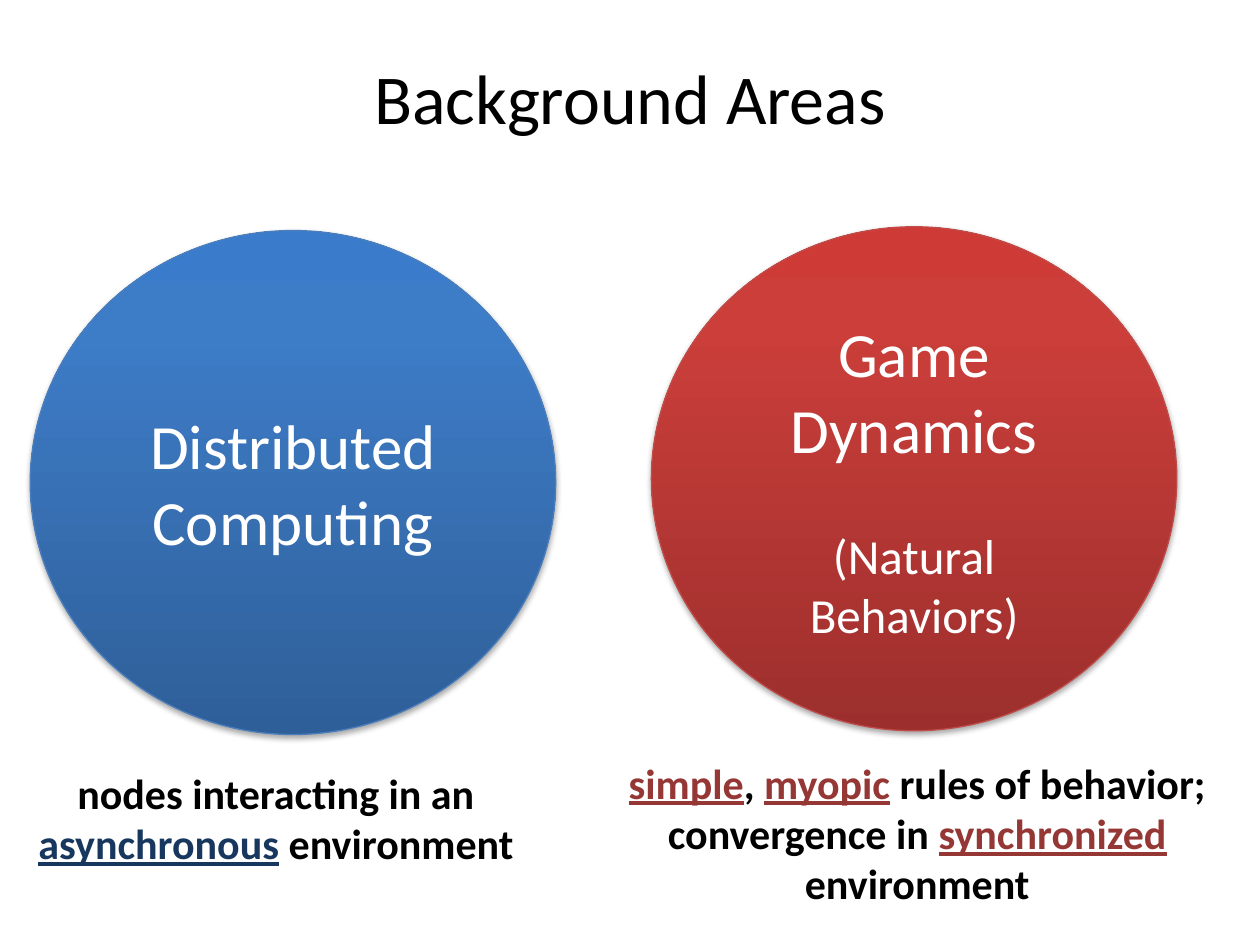
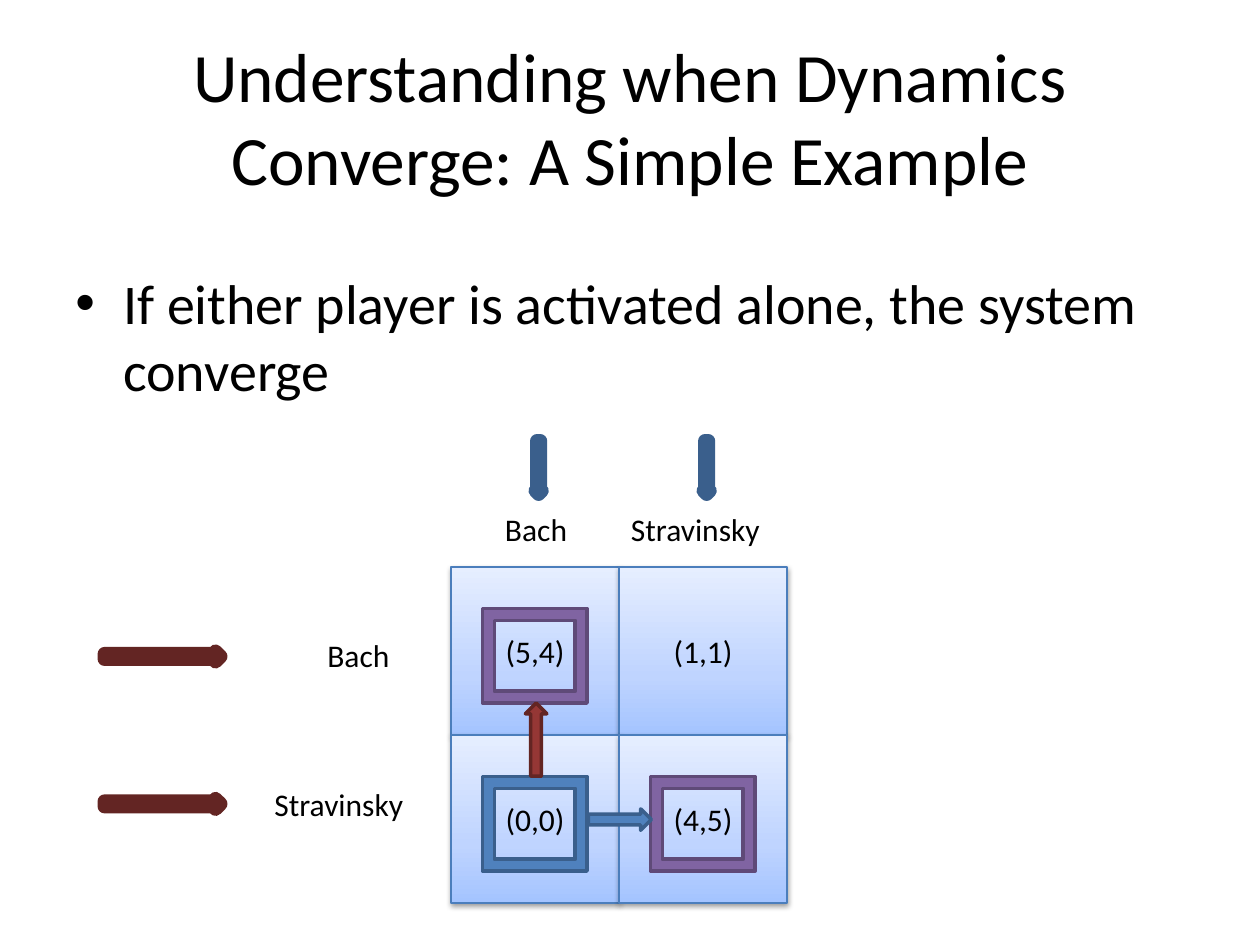
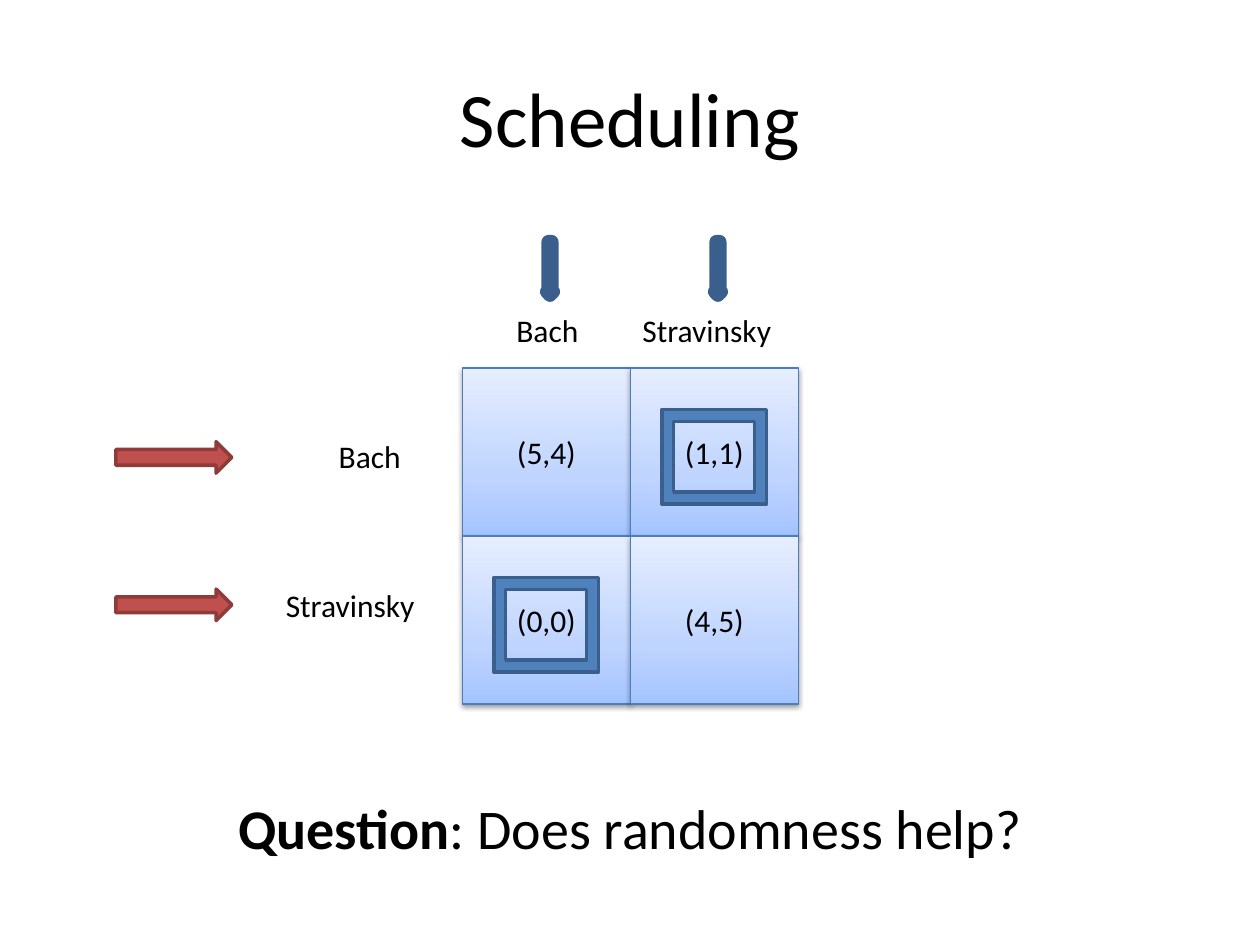
from copy import deepcopy
from dataclasses import dataclass

from lxml import etree
from pptx import Presentation
from pptx.dml.color import RGBColor
from pptx.enum.shapes import MSO_SHAPE
from pptx.enum.text import MSO_ANCHOR, MSO_AUTO_SIZE, PP_ALIGN
from pptx.oxml.ns import qn
from pptx.shapes.autoshape import Shape
from pptx.slide import Slide
from pptx.util import Inches, Pt

ELLIPSE, RECTANGLE, FRAME = MSO_SHAPE.OVAL, MSO_SHAPE.RECTANGLE, MSO_SHAPE.FRAME
RIGHT_ARROW, DOWN_ARROW, UP_ARROW = MSO_SHAPE.RIGHT_ARROW, MSO_SHAPE.DOWN_ARROW, MSO_SHAPE.UP_ARROW
LEFT, CENTER = PP_ALIGN.LEFT, PP_ALIGN.CENTER
TOP, MIDDLE = MSO_ANCHOR.TOP, MSO_ANCHOR.MIDDLE
FIT_SHAPE = MSO_AUTO_SIZE.SHAPE_TO_FIT_TEXT

FONT = "Calibri"
BLACK = RGBColor(0x00, 0x00, 0x00)
WHITE = RGBColor(0xFF, 0xFF, 0xFF)
NAVY = RGBColor(0x17, 0x37, 0x5E)
BLUE = RGBColor(0x4F, 0x81, 0xBD)
DARK_BLUE = RGBColor(0x3A, 0x5F, 0x8C)
EDGE_BLUE = RGBColor(0x4B, 0x7E, 0xBC)
RED = RGBColor(0xC0, 0x50, 0x4D)
EDGE_RED = RGBColor(0xBF, 0x4C, 0x48)
RED_OUTLINE = RGBColor(0x8E, 0x3B, 0x39)
DARK_RED = RGBColor(0x95, 0x37, 0x35)
MAROON = RGBColor(0x63, 0x25, 0x23)
PURPLE = RGBColor(0x80, 0x64, 0xA2)
DARK_PURPLE = RGBColor(0x5F, 0x4A, 0x78)

# Gradient stops run from bottom to top
BLUE_GRADIENT = ((0, RGBColor(0x2F, 0x5F, 0x99)), (0.8, RGBColor(0x3D, 0x7C, 0xC7)),
                 (1, RGBColor(0x3A, 0x7C, 0xCB)))
RED_GRADIENT = ((0, RGBColor(0x9C, 0x2F, 0x2D)), (0.8, RGBColor(0xCB, 0x3E, 0x3A)),
                (1, RGBColor(0xCE, 0x3B, 0x37)))
CELL_GRADIENT = ((0, RGBColor(0xA4, 0xC4, 0xFF)), (0.35, RGBColor(0xBF, 0xD4, 0xFF)),
                 (1, RGBColor(0xE6, 0xEE, 0xFF)))

# Payoff matrix
CELL = 4 / 3
STRATEGIES = ("Bach", "Stravinsky")
LABEL_WIDTHS = (0.7, 1.23)
ROW_LABEL_OFFSETS = ((-1.08, 0.5), (-1.5, 1.68))
COLUMN_LABEL_OFFSETS = ((0.33, -0.5), (1.33, -0.5))
ROW_ARROW_CENTERS = (0.71, 1.88)
PAYOFFS = (("(5,4)", "(1,1)"), ("(0,0)", "(4,5)"))


@dataclass(frozen=True)
class Box:
    left: float
    top: float
    width: float
    height: float

    def lengths(self) -> tuple:
        return Inches(self.left), Inches(self.top), Inches(self.width), Inches(self.height)


@dataclass(frozen=True)
class Run:
    text: str
    color: RGBColor | None = None
    underline: bool = False
    bold: bool = False


@dataclass(frozen=True)
class Paint:
    fill: RGBColor
    line: RGBColor
    line_width: float = 2


BLUE_PAINT = Paint(BLUE, DARK_BLUE)
THICK_BLUE = Paint(BLUE, DARK_BLUE, 8)
PURPLE_PAINT = Paint(PURPLE, DARK_PURPLE)
MAROON_PAINT = Paint(DARK_RED, MAROON)
THICK_MAROON = Paint(DARK_RED, MAROON, 8)
RED_PAINT = Paint(RED, RED_OUTLINE)


@dataclass(frozen=True)
class Matrix:
    left: float
    top: float
    row_arrow_paint: Paint
    row_arrow_height: float
    frames: tuple[tuple[int, int, Paint], ...]


def write_text(shape: Shape, *lines: str | tuple[Run, ...], size: float = 18,
               color: RGBColor = BLACK, bold: bool = False, alignment=CENTER,
               anchor=MIDDLE, wrap: bool = True, last_size: float | None = None,
               last_gap: float = 0) -> None:
    """Writes one paragraph per line; the last may have its own size and gap."""
    frame = shape.text_frame
    frame.word_wrap = wrap
    frame.vertical_anchor = anchor
    for index, line in enumerate(lines):
        paragraph = frame.paragraphs[0] if index == 0 else frame.add_paragraph()
        paragraph.alignment = alignment
        is_last = index == len(lines) - 1
        if is_last and last_gap:
            paragraph.space_before = Pt(last_gap)
        for part in (Run(line),) if isinstance(line, str) else line:
            run = paragraph.add_run()
            run.text = part.text
            run.font.name = FONT
            run.font.size = Pt(last_size if is_last and last_size else size)
            run.font.bold = bold or part.bold
            run.font.underline = part.underline
            run.font.color.rgb = part.color or color


def add_text(slide: Slide, box: Box, *lines: str | tuple[Run, ...], fit: bool = False,
             **text_format) -> Shape:
    shape = slide.shapes.add_textbox(*box.lengths())
    write_text(shape, *lines, **text_format)
    if fit:
        shape.text_frame.auto_size = FIT_SHAPE
    return shape


def add_title(slide: Slide, text: str, size: float, top: float = 0.3) -> None:
    add_text(slide, Box(0.5, top, 9, 1.25), text, size=size)


def add_bullet(shape: Shape) -> None:
    for paragraph in shape.text_frame.paragraphs:
        properties = paragraph._p.get_or_add_pPr()
        properties.set("marL", str(Inches(0.38)))
        properties.set("indent", str(Inches(-0.38)))
        etree.SubElement(properties, qn("a:buFont"), typeface="Arial")
        etree.SubElement(properties, qn("a:buChar"), char="•")


def add_solid(slide: Slide, kind, box: Box, paint: Paint) -> None:
    shape = slide.shapes.add_shape(kind, *box.lengths())
    shape.shadow.inherit = False
    shape.fill.solid()
    shape.fill.fore_color.rgb = paint.fill
    shape.line.color.rgb = paint.line
    shape.line.width = Pt(paint.line_width)


def add_glossy(slide: Slide, kind, box: Box, gradient: tuple, edge: RGBColor,
               shadow_percent: int, shadow_distance: float) -> Shape:
    shape = slide.shapes.add_shape(kind, *box.lengths())
    shape.line.color.rgb = edge
    shape.line.width = Pt(0.75)
    # Three-stop gradient
    shape.fill.gradient()
    shape.fill.gradient_angle = 90
    properties = shape._element.spPr
    stop_list = properties.find(".//" + qn("a:gsLst"))
    stop_list.append(deepcopy(stop_list[0]))
    for stop, (position, color) in zip(shape.fill.gradient_stops, gradient):
        stop.position = position
        stop.color.rgb = color
    # Soft shadow below
    shape.shadow.inherit = False
    shadow = etree.SubElement(properties.find(qn("a:effectLst")), qn("a:outerShdw"),
                              blurRad=str(Pt(3.1)), dist=str(Pt(shadow_distance)),
                              dir="5400000", rotWithShape="0")
    shadow_color = etree.SubElement(shadow, qn("a:srgbClr"), val=str(BLACK))
    etree.SubElement(shadow_color, qn("a:alpha"), val=str(shadow_percent * 1000))
    return shape


def add_matrix(slide: Slide, matrix: Matrix) -> None:
    left, top = matrix.left, matrix.top
    for row, payoffs in enumerate(PAYOFFS):
        for column, payoff in enumerate(payoffs):
            box = Box(left + column * CELL, top + row * CELL, CELL, CELL)
            cell = add_glossy(slide, RECTANGLE, box, CELL_GRADIENT, EDGE_BLUE, 38, 1.6)
            write_text(cell, payoff)
    # Strategy names beside the rows and above the columns
    for offsets in (ROW_LABEL_OFFSETS, COLUMN_LABEL_OFFSETS):
        for name, width, (across, down) in zip(STRATEGIES, LABEL_WIDTHS, offsets):
            add_text(slide, Box(left + across, top + down, width, 0.4), name,
                     alignment=LEFT, anchor=TOP, wrap=False, fit=True)
    # Arrows of the two players
    height = matrix.row_arrow_height
    for index, center in enumerate(ROW_ARROW_CENTERS):
        add_solid(slide, RIGHT_ARROW, Box(left - 2.75, top + center - height / 2, 0.92, height),
                  matrix.row_arrow_paint)
        add_solid(slide, DOWN_ARROW, Box(left + 0.67 + index * CELL, top - 1, 0.05, 0.42),
                  THICK_BLUE)
    # Highlighted outcomes
    for row, column, paint in matrix.frames:
        box = Box(left + column * CELL + 0.25, top + row * CELL + 0.33, 0.83, 0.75)
        add_solid(slide, FRAME, box, paint)


def build_background_areas(slide: Slide) -> None:
    add_title(slide, "Background Areas", 40, top=0.14)
    distributed = add_glossy(slide, ELLIPSE, Box(0.24, 1.83, 4.17, 4), BLUE_GRADIENT,
                             EDGE_BLUE, 35, 1.8)
    write_text(distributed, "Distributed Computing", size=36, color=WHITE)
    dynamics = add_glossy(slide, ELLIPSE, Box(5.17, 1.8, 4.17, 4), RED_GRADIENT,
                          EDGE_RED, 35, 1.8)
    write_text(dynamics, "Game Dynamics", "(Natural Behaviors)", size=36, color=WHITE,
               last_size=28, last_gap=34)
    # Captions
    caption_format = dict(size=24, bold=True, anchor=TOP, fit=True)
    add_text(slide, Box(0.17, 6.04, 4.04, 0.91),
             (Run("nodes interacting in an "), Run("asynchronous", NAVY, True),
              Run(" environment")), **caption_format)
    add_text(slide, Box(4.83, 5.96, 4.9, 1.31),
             (Run("simple", DARK_RED, True), Run(", "), Run("myopic", DARK_RED, True),
              Run(" rules of behavior;")),
             (Run("convergence in "), Run("synchronized", DARK_RED, True),
              Run(" environment")), **caption_format)


def build_simple_example(slide: Slide) -> None:
    add_title(slide, "Understanding when Dynamics Converge: A Simple Example", 39.6)
    body = add_text(slide, Box(0.5, 2.08, 9, 1.83),
                    "If either player is activated alone, the system converge",
                    size=32, alignment=LEFT, anchor=TOP)
    add_bullet(body)
    add_matrix(slide, Matrix(3.58, 4.5, THICK_MAROON, 0.08,
                             ((1, 0, BLUE_PAINT), (1, 1, PURPLE_PAINT), (0, 0, PURPLE_PAINT))))
    # Moves out of (0,0)
    add_solid(slide, UP_ARROW, Box(4.17, 5.58, 0.17, 0.58), MAROON_PAINT)
    add_solid(slide, RIGHT_ARROW, Box(4.67, 6.42, 0.5, 0.17), BLUE_PAINT)


def build_scheduling(slide: Slide) -> None:
    add_title(slide, "Scheduling", 44)
    add_text(slide, Box(0.5, 6.25, 9, 0.83),
             (Run("Question", bold=True), Run(": Does randomness help?")),
             size=32, anchor=TOP)
    add_matrix(slide, Matrix(3.67, 2.92, RED_PAINT, 0.25,
                             ((1, 0, BLUE_PAINT), (0, 1, BLUE_PAINT))))


def main() -> None:
    presentation = Presentation()
    presentation.slide_width = Inches(10)
    presentation.slide_height = Inches(7.5)
    blank_layout = presentation.slide_layouts[6]
    for build in (build_background_areas, build_simple_example, build_scheduling):
        build(presentation.slides.add_slide(blank_layout))
    presentation.save("out.pptx")


if __name__ == "__main__":
    main()
